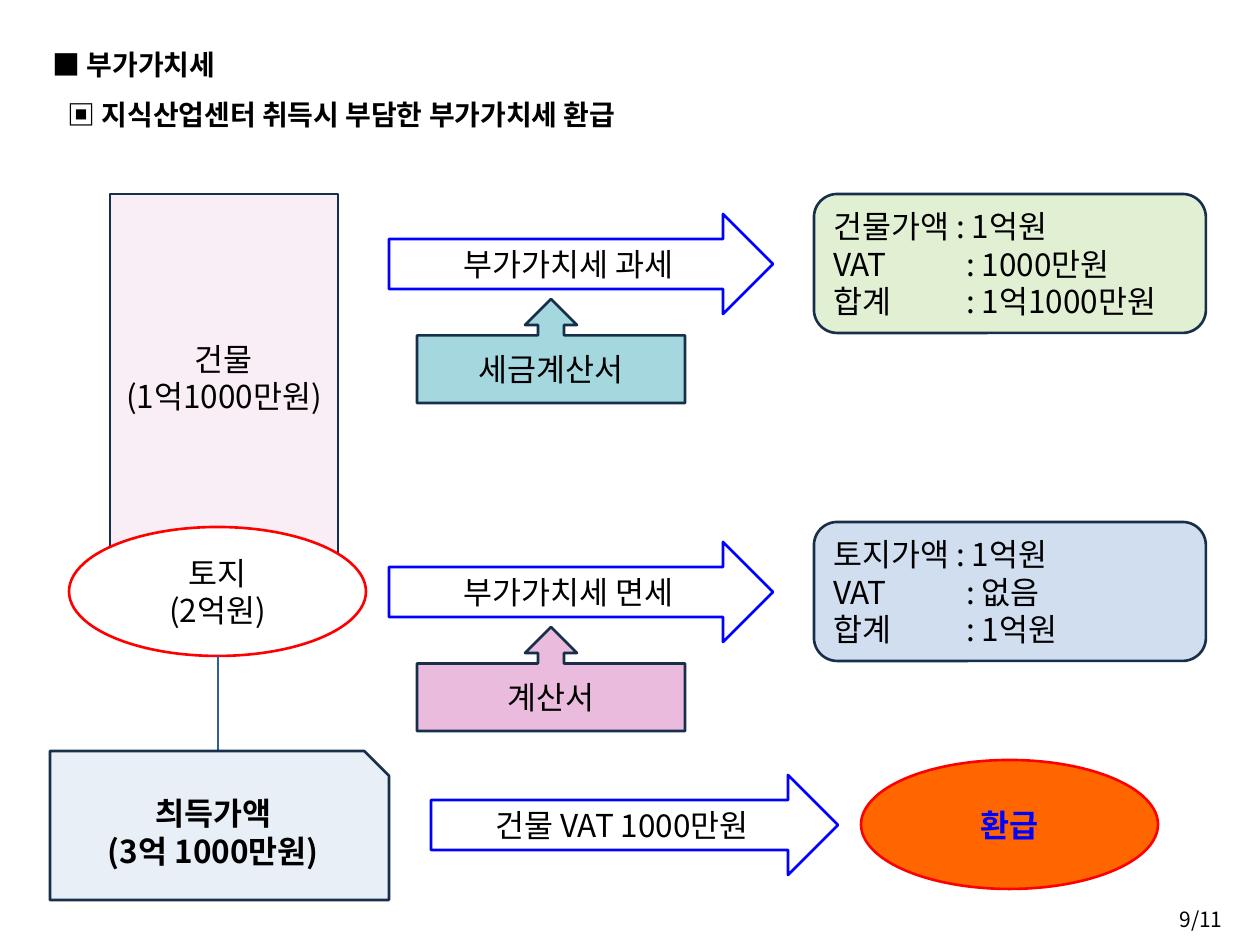
from lxml import etree
from pptx import Presentation
from pptx.dml.color import RGBColor
from pptx.enum import shapes, text
from pptx.oxml import ns
from pptx.util import Pt

PX = 914400 / 126
FONT = "Noto Sans CJK KR"
KIND = shapes.MSO_SHAPE
ALIGN = text.PP_ALIGN
MID = text.MSO_ANCHOR.MIDDLE

BLACK = RGBColor(0x00, 0x00, 0x00)
WHITE = RGBColor(0xFF, 0xFF, 0xFF)
NAVY = RGBColor(0x18, 0x2F, 0x4B)
STEEL = RGBColor(0x2E, 0x5F, 0x9A)
BLUE = RGBColor(0x00, 0x00, 0xFF)
RED = RGBColor(0xFF, 0x00, 0x00)
ORANGE = RGBColor(0xFF, 0x66, 0x00)
ROSE = RGBColor(0xFA, 0xEE, 0xF6)
GREEN = RGBColor(0xE1, 0xEF, 0xD3)
SKY = RGBColor(0xD0, 0xDE, 0xF0)
TEAL = RGBColor(0xA4, 0xD7, 0xDE)
PINK = RGBColor(0xEA, 0xBB, 0xDC)
PALE = RGBColor(0xE8, 0xEF, 0xF7)

ROW_TOP = 194
ROW_STEP = 328
COLON = 133


def emu(*vals):
    return [round(v * PX) for v in vals]


def write(frame, words, size=18, color=BLACK, bold=False, align=ALIGN.CENTER):
    frame.text = words
    frame.word_wrap = True
    for para in frame.paragraphs:
        para.alignment = align
        for run in para.runs:
            font = run.font
            font.name, font.size, font.bold = FONT, Pt(size), bold
            font.color.rgb = color
            east = etree.SubElement(run._r.get_or_add_rPr(), ns.qn("a:ea"))
            east.set("typeface", FONT)


def add_tab(para, pos):
    stops = etree.SubElement(para._p.get_or_add_pPr(), ns.qn("a:tabLst"))
    stop = etree.SubElement(stops, ns.qn("a:tab"))
    stop.set("pos", str(emu(pos)[0]))
    stop.set("algn", "l")


def add_box(slide, kind, at, fill, line, words, **style):
    box = slide.shapes.add_shape(kind, *emu(*at))
    box.shadow.inherit = False
    box.fill.solid()
    box.fill.fore_color.rgb = fill
    box.line.color.rgb = line
    box.line.width = Pt(1.5)
    box.text_frame.vertical_anchor = MID
    write(box.text_frame, words, **style)
    return box


def add_arrow(slide, at, words):
    add_box(slide, KIND.RIGHT_ARROW, at, WHITE, BLUE, words)


def add_row(slide, top, rule, paper, tint, sums, shade):
    """Add a tax arrow, the document under it and the resulting sums."""
    add_arrow(slide, (389, top + 20, 384, 100), rule)
    box = add_box(slide, KIND.ROUNDED_RECTANGLE, (814, top, 392, 139),
                  shade, NAVY, sums, align=ALIGN.LEFT)
    for para in box.text_frame.paragraphs:
        add_tab(para, COLON)
    add_box(slide, KIND.UP_ARROW_CALLOUT, (417, top + 105, 268, 104),
            tint, NAVY, paper)


def add_title(slide):
    title = slide.shapes.title
    title.left, title.top, title.width, title.height = emu(40, 26, 1181, 110)
    frame = title.text_frame
    frame.vertical_anchor = MID
    write(frame, "■ 부가가치세\n▣ 지식산업센터 취득시 부담한 부가가치세 환급",
          size=16, bold=True, align=ALIGN.LEFT)
    for para in frame.paragraphs:
        para.line_spacing = 1.5
        para.space_before = Pt(0)
    frame.paragraphs[1]._p.get_or_add_pPr().set("marL", str(emu(15)[0]))


def add_line(slide, start, end):
    line = slide.shapes.add_connector(
        shapes.MSO_CONNECTOR.STRAIGHT, *emu(*start, *end))
    line.line.color.rgb = STEEL
    line.line.width = Pt(1)
    etree.SubElement(line._element.spPr, ns.qn("a:effectLst"))


def add_number(slide):
    box = slide.shapes.add_textbox(*emu(1166, 900, 69, 37))
    write(box.text_frame, "9/11", size=12, align=ALIGN.RIGHT)


def main():
    deck = Presentation()
    deck.slide_width, deck.slide_height = emu(1260, 945)
    slide = deck.slides.add_slide(deck.slide_layouts[5])
    add_title(slide)
    add_number(slide)

    add_box(slide, KIND.RECTANGLE, (110, ROW_TOP, 228, 367), ROSE, NAVY,
            "건물\n(1억1000만원)")
    add_box(slide, KIND.OVAL, (69, 527, 297, 129), WHITE, RED,
            "토지\n(2억원)")
    add_line(slide, (218, 656), (218, 752))
    add_box(slide, KIND.SNIP_1_RECTANGLE, (50, 751, 339, 149), PALE, NAVY,
            "츼득가액\n(3억 1000만원)", bold=True)

    rows = [
        ("부가가치세 과세", "세금계산서", TEAL,
         "건물가액 : 1억원\nVAT\t: 1000만원\n합계\t: 1억1000만원", GREEN),
        ("부가가치세 면세", "계산서", PINK,
         "토지가액 : 1억원\nVAT\t: 없음\n합계\t: 1억원", SKY),
    ]
    for i, row in enumerate(rows):
        add_row(slide, ROW_TOP + i * ROW_STEP, *row)

    add_arrow(slide, (431, 775, 407, 100), "건물 VAT 1000만원")
    add_box(slide, KIND.OVAL, (861, 760, 297, 129), ORANGE, RED, "환급",
            color=BLUE, bold=True)
    deck.save("out.pptx")


if __name__ == "__main__":
    main()
